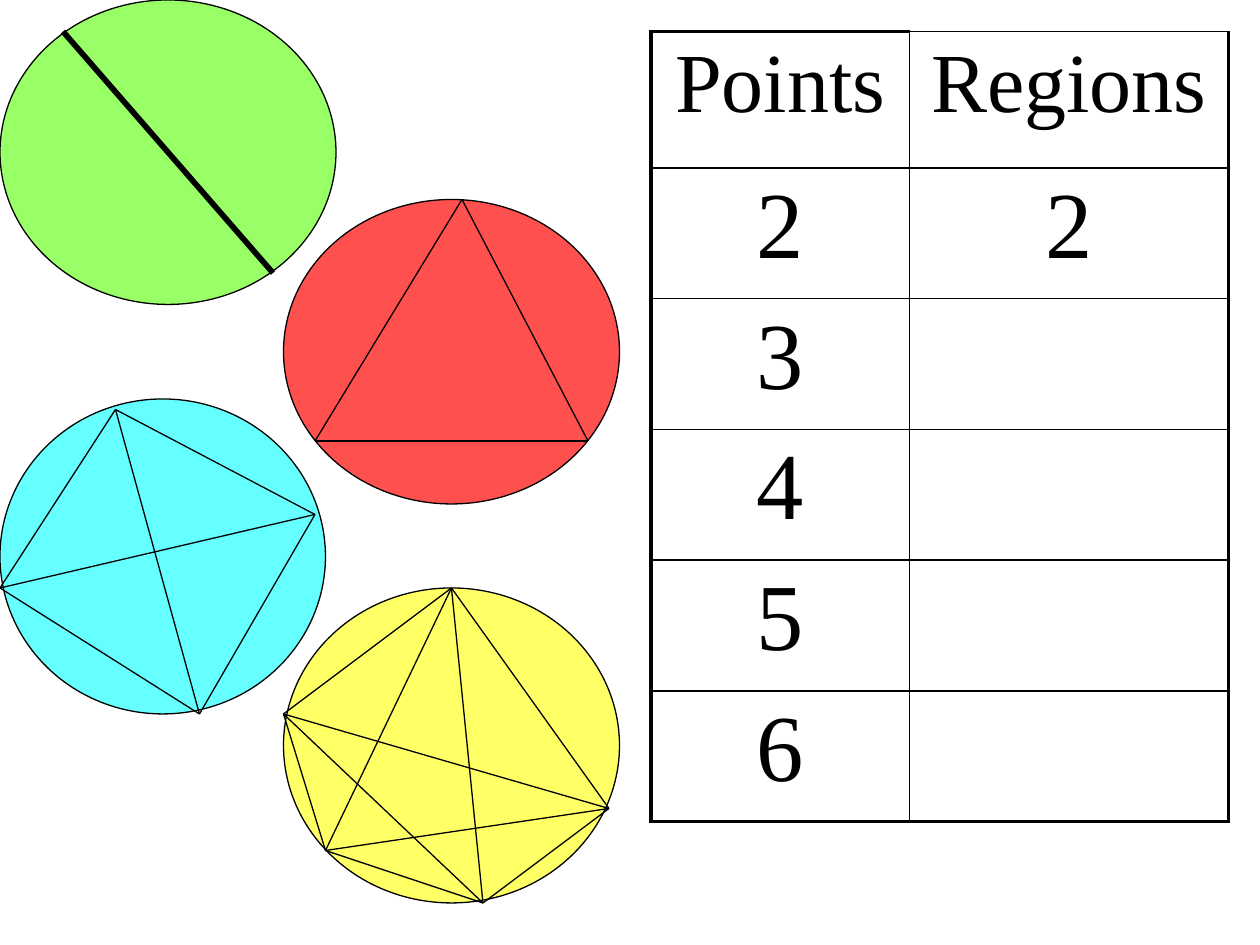
from dataclasses import dataclass
from itertools import combinations

from lxml.etree import SubElement
from pptx import Presentation
from pptx.dml.color import RGBColor
from pptx.enum.shapes import MSO_CONNECTOR, MSO_SHAPE
from pptx.enum.text import PP_ALIGN
from pptx.oxml.ns import qn
from pptx.slide import Slide
from pptx.table import _Cell as Cell
from pptx.util import Pt

COLORS = {
    "black": "000000",
    "green": "99FF66",
    "red": "FF5050",
    "yellow": "FFFF66",
    "cyan": "66FFFF",
}
FONT = "Times New Roman"
THIN, THICK = 1, 2.25


@dataclass(frozen=True)
class Circle:
    """An ellipse whose rim points are all joined in pairs."""
    color: str
    box: tuple[float, float, float, float]
    points: list[tuple[float, float]]
    chord_width: float = 0.75


CIRCLES = [
    Circle("green", (0, 0, 192, 174), [(36, 18), (156, 156)], 3.25),
    Circle("red", (162, 114, 192, 174), [(264, 114), (180, 252), (336, 252)]),
    Circle("yellow", (162, 336, 192, 180),
           [(258, 336), (162, 408), (186, 486), (276, 516), (348, 462)]),
    Circle("cyan", (0, 228, 186, 180),
           [(66, 234), (0, 336), (114, 408), (180, 294)]),
]

ROWS = [("Points", "Regions"), ("2", "2"), ("3", ""), ("4", ""), ("5", ""), ("6", "")]
COL_WIDTHS = [147.6, 182.4]
HEADER_HEIGHT, ROW_HEIGHT = 78, 74.7


def rgb(name: str) -> RGBColor:
    return RGBColor.from_string(COLORS[name])


def draw_disc(s: Slide, circle: Circle) -> None:
    sp = s.shapes.add_shape(MSO_SHAPE.OVAL, *map(Pt, circle.box))
    sp.shadow.inherit = False
    sp.fill.solid()
    sp.fill.fore_color.rgb = rgb(circle.color)
    sp.line.color.rgb = rgb("black")
    sp.line.width = Pt(0.75)


def draw_chords(s: Slide, circle: Circle) -> None:
    for start, end in combinations(circle.points, 2):
        line = s.shapes.add_connector(MSO_CONNECTOR.STRAIGHT, *map(Pt, start + end))
        line.line.color.rgb = rgb("black")
        line.line.width = Pt(circle.chord_width)
        SubElement(line._element.spPr, qn("a:effectLst"))


def set_text(cell: Cell, text: str, *, size: float, color: str = "black",
             align: PP_ALIGN = PP_ALIGN.CENTER) -> None:
    p = cell.text_frame.paragraphs[0]
    p.alignment = align
    spacing = SubElement(p._p.get_or_add_pPr(), qn("a:spcBef"))
    SubElement(spacing, qn("a:spcPct"), val="20000")
    r = p.add_run()
    r.text = text
    r.font.name = FONT
    r.font.size = Pt(size)
    r.font.bold = False
    r.font.color.rgb = rgb(color)


def set_borders(cell: Cell, **widths: float) -> None:
    """Draw the given sides; pass them in the order L, R, T, B."""
    tc_pr = cell._tc.get_or_add_tcPr()
    for side, width in widths.items():
        ln = SubElement(tc_pr, qn(f"a:ln{side}"), w=str(Pt(width)))
        fill = SubElement(ln, qn("a:solidFill"))
        SubElement(fill, qn("a:srgbClr"), val=COLORS["black"])


def draw_table(s: Slide) -> None:
    heights = [HEADER_HEIGHT] + [ROW_HEIGHT] * (len(ROWS) - 1)
    table = s.shapes.add_table(len(ROWS), len(COL_WIDTHS), Pt(372), Pt(18),
                               Pt(sum(COL_WIDTHS)), Pt(sum(heights))).table
    table.first_row = table.horz_banding = False
    for column, width in zip(table.columns, COL_WIDTHS):
        column.width = Pt(width)
    for i, (row, height) in enumerate(zip(ROWS, heights)):
        table.rows[i].height = Pt(height)
        for j, text in enumerate(row):
            cell = table.cell(i, j)
            set_borders(
                cell,
                L=THICK if j == 0 else THIN,
                R=THICK if j == len(row) - 1 else THIN,
                T=THICK if i == j == 0 else THIN,
                B=THICK if i == len(ROWS) - 1 else THIN,
            )
            cell.fill.background()
            if text:
                set_text(cell, text, size=48 if i == 0 else 54)


def main() -> None:
    prs = Presentation()
    prs.slide_width, prs.slide_height = Pt(720), Pt(540)
    s = prs.slides.add_slide(prs.slide_layouts[6])
    for circle in CIRCLES:
        draw_disc(s, circle)
    draw_table(s)
    for circle in CIRCLES:
        draw_chords(s, circle)
    prs.save("out.pptx")


if __name__ == "__main__":
    main()
